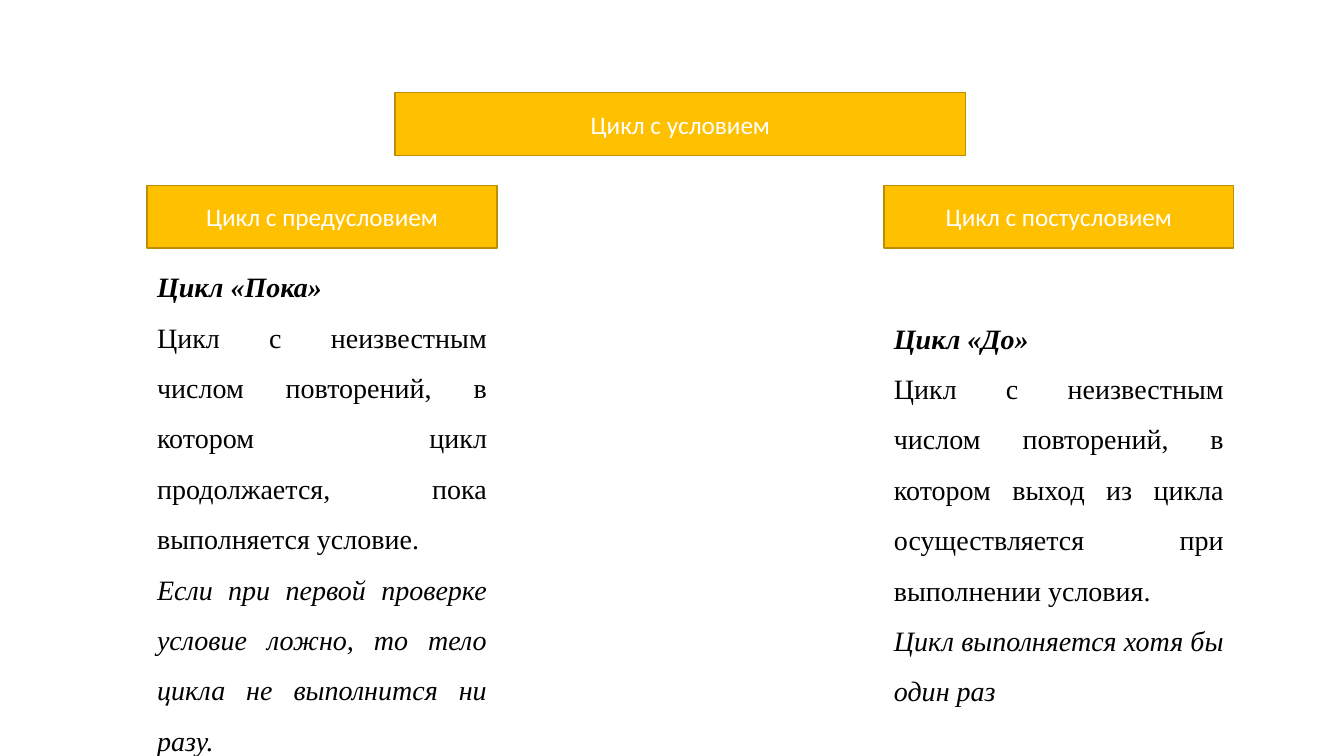
"""Builds a slide comparing the two kinds of conditional loop."""
from dataclasses import dataclass

from pptx import Presentation
from pptx.dml.color import RGBColor
from pptx.enum.shapes import MSO_SHAPE as Shape
from pptx.enum.text import MSO_ANCHOR as Anchor, MSO_AUTO_SIZE as AutoSize, PP_ALIGN as Align
from pptx.slide import Slide
from pptx.text.text import _Paragraph as Paragraph
from pptx.util import Pt

HEADER_H = 44.64
COLUMN_TOP, COLUMN_W = 132.48, 249.84


@dataclass
class Header:
    text: str
    left: float
    top: float
    width: float


@dataclass
class LoopKind:
    header: str
    name: str
    definition: str
    remark: str
    left: float
    top: float
    height: float


ROOT = Header("Цикл с условием", 282.24, 66.24, 407.52)
LOOPS = [
    LoopKind(
        "Цикл с предусловием",
        "Цикл «Пока»",
        "Цикл с неизвестным числом повторений, в котором цикл продолжается, "
        "пока выполняется условие.",
        "Если при первой проверке условие ложно, то тело цикла не выполнится ни разу.",
        105.12, 177.12, 370.8),
    LoopKind(
        "Цикл с постусловием",
        "Цикл «До»",
        "Цикл с неизвестным числом повторений, в котором выход из цикла "
        "осуществляется при выполнении условия.",
        "Цикл выполняется хотя бы один раз",
        631.44, 213.84, 298.08),
]


def rgb(value: str) -> RGBColor:
    return RGBColor.from_string(value)


def set_font(p: Paragraph, name: str, size: float, color: str,
             bold: bool = False, italic: bool = False) -> None:
    font = p.font
    font.name, font.size = name, Pt(size)
    font.bold, font.italic = bold, italic
    font.color.rgb = rgb(color)


def add_header(s: Slide, header: Header) -> None:
    sp = s.shapes.add_shape(Shape.RECTANGLE, Pt(header.left), Pt(header.top),
                            Pt(header.width), Pt(HEADER_H))
    sp.shadow.inherit = False
    sp.fill.solid()
    sp.fill.fore_color.rgb = rgb("FFC000")
    sp.line.color.rgb = rgb("BD8E00")
    sp.line.width = Pt(1)
    tf = sp.text_frame
    tf.vertical_anchor = Anchor.MIDDLE
    p = tf.paragraphs[0]
    p.text = header.text
    p.alignment = Align.CENTER
    set_font(p, "Calibri", 18, "FFFFFF")


def add_description(s: Slide, loop: LoopKind) -> None:
    sp = s.shapes.add_textbox(Pt(loop.left), Pt(loop.top), Pt(COLUMN_W), Pt(loop.height))
    tf = sp.text_frame
    tf.word_wrap = True
    tf.auto_size = AutoSize.SHAPE_TO_FIT_TEXT
    tf.text = "\n".join([loop.name, loop.definition, loop.remark])
    styles = [(True, True), (False, False), (False, True)]
    for p, (bold, italic) in zip(tf.paragraphs, styles):
        p.alignment = Align.JUSTIFY
        p.line_spacing = 1.5
        set_font(p, "Times New Roman", 20, "000000", bold, italic)


def main() -> None:
    prs = Presentation()
    prs.slide_width, prs.slide_height = Pt(960), Pt(540)
    s = prs.slides.add_slide(prs.slide_layouts[6])
    add_header(s, ROOT)
    for loop in LOOPS:
        add_header(s, Header(loop.header, loop.left, COLUMN_TOP, COLUMN_W))
        add_description(s, loop)
    prs.save("out.pptx")


if __name__ == "__main__":
    main()
